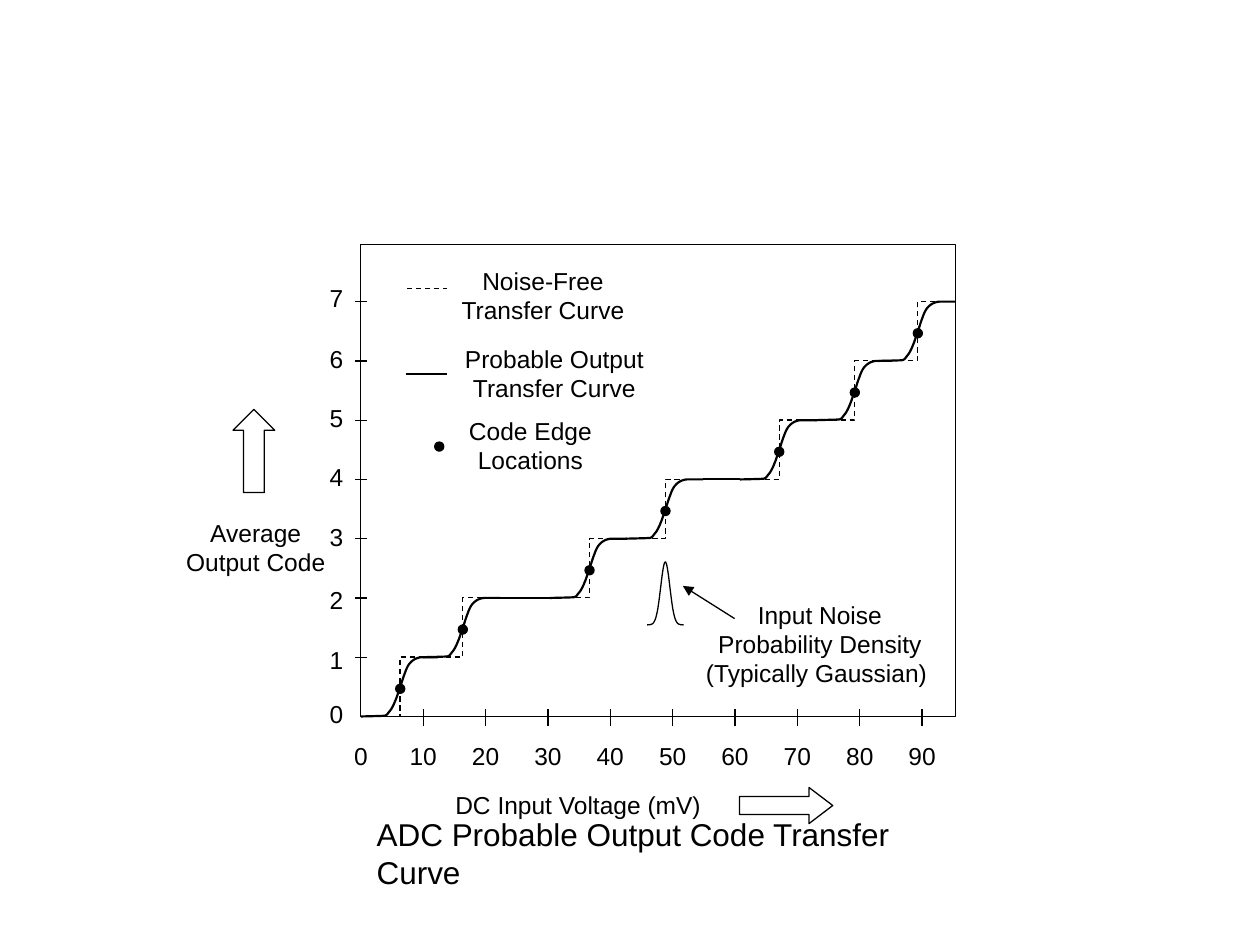
"""Build a slide with the probable output code transfer curve of a noisy ADC."""
from math import exp

from lxml import etree
from pptx import Presentation
from pptx.dml.color import RGBColor
from pptx.enum.dml import MSO_LINE
from pptx.enum.shapes import MSO_CONNECTOR, MSO_SHAPE
from pptx.enum.text import PP_ALIGN
from pptx.oxml.ns import qn
from pptx.util import Pt

DASH = MSO_LINE.DASH
STRAIGHT = MSO_CONNECTOR.STRAIGHT
OVAL, RIGHT_ARROW, UP_ARROW = MSO_SHAPE.OVAL, MSO_SHAPE.RIGHT_ARROW, MSO_SHAPE.UP_ARROW
CENTER, LEFT_ALIGN = PP_ALIGN.CENTER, PP_ALIGN.LEFT

COLORS = {"ink": "000000", "paper": "FFFFFF"}
FONT = "Arial"
THIN, THICK = 0.75, 1.25

X0, X1, Y0, TOP = 206.2, 546.2, 409.4, 139.7
CODE_STEP, TICK_STEP = 33.86, 35.64
EDGE, EDGE_RISE, STEP_WIDTH, DOT = 22.5, 15.8, 44, 5.2

STEP_STARTS = [206.2, 242, 314.4, 357.8, 422.8, 466, 502]
STEP_SHAPE = [(0, 0), (11.5, 0.3), (14.4, 0.7), (16, 2.4), (18, 5.2), (20.3, 10.4),
              (22.9, 18), (24.8, 23.7), (26.8, 28.6), (28.9, 31.3), (31.2, 32.9),
              (33.2, 33.6), (34.9, 33.86), (37, 33.86), (STEP_WIDTH, 33.86)]
FLAT_CODES = [2, 4]
CODE_LABEL_TOPS = [396, 365, 330.5, 294.5, 260.6, 226.8, 193, 158.4]
BELL = {"center": 380.2, "base": 357.1, "height": 36, "sigma": 2.6, "half": 10.4}

TEXTS = [
    (["Average", "Output Code"], 97.9, 292.3, 96.5, 75),
    (["DC Input Voltage (mV)"], 244, 447.8, 172.8, 32.4),
    ([" Input Noise", " Probability Density", "(Typically Gaussian)"], 377.3, 339.1, 178.6, 63.4),
    (["Noise-Free Transfer Curve"], 249.8, 148.3, 121, 38.9),
    (["Probable Output", "Transfer Curve"], 252.7, 193, 128.2, 42.5),
    (["Code Edge Locations"], 252, 234, 102.2, 38.9),
]
TITLE = "ADC Probable Output Code Transfer Curve"
BLOCK_ARROWS = [(RIGHT_ARROW, 422.6, 450, 53.3, 20.6, 0.657),
                (UP_ARROW, 133.2, 234, 23.8, 47.5, 0.499)]

prs = Presentation()
prs.slide_width, prs.slide_height = Pt(720), Pt(540)
s = prs.slides.add_slide(prs.slide_layouts[6])


def rgb(name):
    return RGBColor.from_string(COLORS[name])


def level(code):
    return Y0 - code * CODE_STEP


def set_line(line, width, dash=None):
    line.color.rgb = rgb("ink")
    line.width = Pt(width)
    if dash:
        line.dash_style = dash


def add_text(lines, x, y, w, h, size=14, align=CENTER):
    tf = s.shapes.add_textbox(Pt(x), Pt(y), Pt(w), Pt(h)).text_frame
    tf.word_wrap = True
    for i, text in enumerate(lines):
        p = tf.paragraphs[0] if i == 0 else tf.add_paragraph()
        p.text = text
        p.alignment = align
        p.font.size, p.font.name = Pt(size), FONT
        p.font.color.rgb = rgb("ink")


def add_line(x1, y1, x2, y2, width=THIN, dash=None, arrow=False):
    c = s.shapes.add_connector(STRAIGHT, Pt(x1), Pt(y1), Pt(x2), Pt(y2))
    set_line(c.line, width, dash)
    if arrow:
        etree.SubElement(c.line._get_or_add_ln(), qn("a:tailEnd"), type="triangle")
    etree.SubElement(c._element.spPr, qn("a:effectLst"))


def add_shape(kind, x, y, w, h, fill):
    sp = s.shapes.add_shape(kind, Pt(x), Pt(y), Pt(w), Pt(h))
    sp.shadow.inherit = False
    sp.fill.solid()
    sp.fill.fore_color.rgb = rgb(fill)
    set_line(sp.line, THIN)
    return sp


def add_dot(x, y):
    add_shape(OVAL, x - DOT / 2, y - DOT / 2, DOT, DOT, "ink")


def add_path(points, width=THIN, dash=None, close=False):
    pts = [(Pt(x), Pt(y)) for x, y in points]
    fb = s.shapes.build_freeform(*pts[0])
    fb.add_line_segments(pts[1:], close=close)
    sp = fb.convert_to_shape()
    sp.shadow.inherit = False
    sp.fill.background()
    set_line(sp.line, width, dash)


def smooth(points, parts=4):
    """Return a Catmull-Rom curve through the points."""
    ends = [points[0], *points, points[-1]]
    curve = []
    for a, b, c, d in zip(ends, ends[1:], ends[2:], ends[3:]):
        for t in (i / parts for i in range(parts)):
            curve.append(tuple(
                q + t * ((r - p) + t * ((2 * p - 5 * q + 4 * r - u) + t * (3 * q - p - 3 * r + u))) / 2
                for p, q, r, u in zip(a, b, c, d)))
    return curve + [points[-1]]


add_path([(X0, Y0), (X0, TOP), (X1, TOP), (X1, Y0)], close=True)
for kind, x, y, w, h, head in BLOCK_ARROWS:
    add_shape(kind, x, y, w, h, "paper").adjustments[1] = head

step_curve = smooth(STEP_SHAPE)
ideal = [(X0, Y0)]
for code, start in enumerate(STEP_STARTS):
    add_path([(start + dx, level(code) - dy) for dx, dy in step_curve], THICK)
    add_dot(start + EDGE, level(code) - EDGE_RISE)
    ideal += [(start + EDGE, level(code)), (start + EDGE, level(code + 1))]
add_path(ideal + [(X1, level(len(STEP_STARTS)))], dash=DASH)
for code in FLAT_CODES:
    add_line(STEP_STARTS[code - 1] + STEP_WIDTH, level(code), STEP_STARTS[code], level(code), THICK)

offsets = [BELL["half"] * i / 24 for i in range(-24, 25)]
add_path([(BELL["center"] + dx,
           BELL["base"] - BELL["height"] * exp(-(dx / BELL["sigma"]) ** 2 / 2)) for dx in offsets])
add_line(419.8, 353.5, 390.2, 334.8, arrow=True)

for code, top in enumerate(CODE_LABEL_TOPS):
    add_text([str(code)], 178.6, top, 27.4, 21.6)
    if code:
        add_line(X0 + 3.6, level(code), X0 - 3.6, level(code))
for i in range(10):
    x = X0 + i * TICK_STEP
    w = 72 if i else 27.4
    add_text([str(10 * i)], x - w / 2, 419.8, w, 26.6)
    if i:
        add_line(x, 405.4, x, 414.7)

for text in TEXTS:
    add_text(*text)
add_line(232.6, 164.9, 255.6, 164.9, dash=DASH)
add_line(231.8, 213.8, 255.6, 213.8, THICK)
add_dot(251, 255.2)
add_text([TITLE], 208.1, 462.2, 331.9, 28.8, 18, LEFT_ALIGN)

prs.save("out.pptx")
